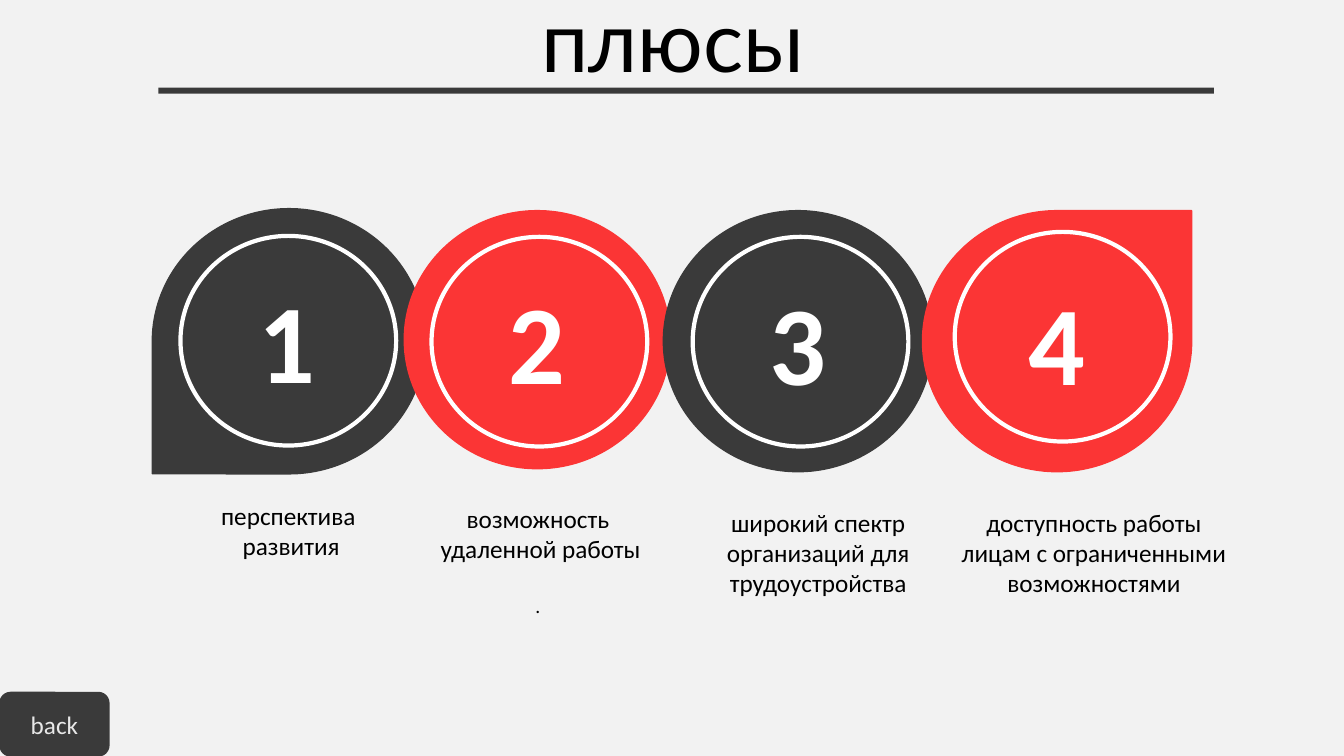
import pptx
import pptx.util
import pptx.dml.color
import pptx.enum.shapes
import pptx.enum.text

KIND = pptx.enum.shapes.MSO_SHAPE
ANCHOR = pptx.enum.text.MSO_ANCHOR
DARK, RED, WHITE, BLACK = "3A3A3A", "FB3535", "FFFFFF", "000000"


def color(code):
    return pptx.dml.color.RGBColor.from_string(code)


class Deck:
    def __init__(self, wide, high):
        self.file = pptx.Presentation()
        self.file.slide_width = pptx.util.Inches(wide)
        self.file.slide_height = pptx.util.Inches(high)
        self.page = self.file.slides.add_slide(self.file.slide_layouts[6])

    def ground(self, code):
        fill = self.page.background.fill
        fill.solid()
        fill.fore_color.rgb = color(code)

    def place(self, box):
        wide, high = self.file.slide_width, self.file.slide_height
        return [round(part * size / 100)
                for part, size in zip(box, (wide, high, wide, high))]

    def shape(self, kind, box, fill=None, line=None, width=1):
        item = self.page.shapes.add_shape(kind, *self.place(box))
        item.shadow.inherit = False
        if fill:
            item.fill.solid()
            item.fill.fore_color.rgb = color(fill)
        else:
            item.fill.background()
        if line:
            item.line.color.rgb = color(line)
            item.line.width = pptx.util.Pt(width)
        else:
            item.line.fill.background()
        return item

    def letter(self, item, text, size, code, font="Calibri", bold=False,
               anchor=ANCHOR.MIDDLE, wrap=True):
        frame = item.text_frame
        frame.text = text
        frame.word_wrap = wrap
        frame.vertical_anchor = anchor
        for para in frame.paragraphs:
            para.alignment = pptx.enum.text.PP_ALIGN.CENTER
            for run in para.runs:
                run.font.name = font
                run.font.size = pptx.util.Pt(size)
                run.font.bold = bold
                run.font.color.rgb = color(code)
        return frame.paragraphs

    def label(self, box, text, size, code, **style):
        item = self.page.shapes.add_textbox(*self.place(box))
        return self.letter(item, text, size, code, **style)


def main():
    deck = Deck(13.33, 7.5)
    deck.ground("F2F2F2")

    title = deck.label((6.9, -3.73, 86.27, 19.33), "плюсы", 60, BLACK, font="Lato")
    title[0].line_spacing = 0.9
    deck.shape(KIND.RECTANGLE, (11.78, 11.6, 78.54, 0.8), DARK)

    discs = [
        (KIND.TEAR, (11.33, 27.6, 20.33, 35.07), DARK, 180, ""),
        (KIND.OVAL, (30.08, 27.87, 19.8, 34.13), RED, 0, "2"),
        (KIND.OVAL, (49.36, 27.87, 20.03, 34.53), DARK, 0, "3"),
        (KIND.TEAR, (68.64, 27.87, 20.03, 34.53), RED, 0, "4"),
    ]
    for kind, box, fill, turn, digit in discs:
        disc = deck.shape(kind, box, fill, fill)
        disc.rotation = turn
        if digit:
            deck.letter(disc, digit, 80, WHITE, bold=True)

    rings = [(13.43, 31.2), (32.11, 31.33), (51.54, 31.33), (71.04, 30.67)]
    for left, top in rings:
        deck.shape(KIND.OVAL, (left, top, 16.05, 27.73), line=WHITE, width=3)
    deck.label((18.3, 35.2, 6.15, 19.33), "1", 80, WHITE, bold=True,
               anchor=ANCHOR.TOP, wrap=False)

    notes = [
        ((9.15, 65.47, 24.61, 9.47), "перспектива\n развития"),
        ((15, 65.87, 50.04, 15.73), "возможность\n удаленной работы\n."),
        ((50.19, 66.4, 21.38, 16.67), "широкий спектр организаций для трудоустройства"),
        ((67.14, 66.4, 28.51, 19.73),
         "доступность работы\n лицам с ограниченными \nвозможностями"),
    ]
    for box, text in notes:
        lines = deck.label(box, text, 18, BLACK, anchor=ANCHOR.TOP)
        if lines[-1].text == ".":
            lines[-1].space_before = pptx.util.Pt(22)
            lines[-1].runs[0].font.size = pptx.util.Pt(14)

    back = deck.shape(KIND.ROUNDED_RECTANGLE, (0, 91.6, 8.1, 8.4), DARK, DARK)
    deck.letter(back, "back", 18, "E8E8E8")

    deck.file.save("out.pptx")


if __name__ == "__main__":
    main()
